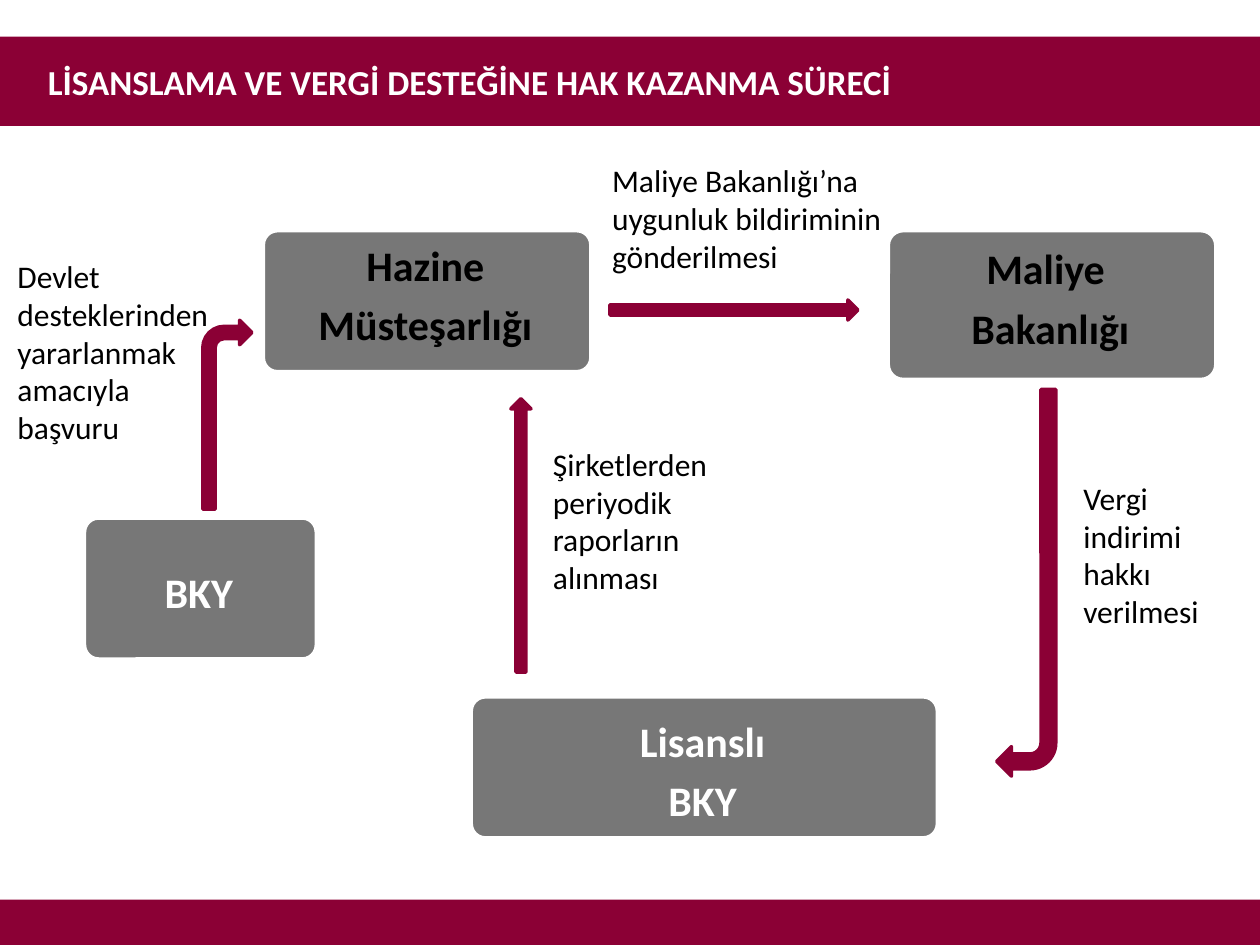
from dataclasses import dataclass

from pptx import Presentation
from pptx.dml.color import RGBColor
from pptx.enum.shapes import MSO_SHAPE
from pptx.enum.text import MSO_ANCHOR, MSO_AUTO_SIZE, PP_ALIGN
from pptx.util import Pt

RECTANGLE = MSO_SHAPE.RECTANGLE
ROUNDED = MSO_SHAPE.ROUNDED_RECTANGLE
BENT_ARROW = MSO_SHAPE.BENT_ARROW
RIGHT_ARROW = MSO_SHAPE.RIGHT_ARROW
MIDDLE = MSO_ANCHOR.MIDDLE
CENTER = PP_ALIGN.CENTER
GROW = MSO_AUTO_SIZE.SHAPE_TO_FIT_TEXT


@dataclass(frozen=True)
class Theme:
    font: str = "Calibri"
    accent: RGBColor = RGBColor(0x8B, 0x00, 0x35)
    gray: RGBColor = RGBColor(0x77, 0x77, 0x77)
    white: RGBColor = RGBColor(0xFF, 0xFF, 0xFF)
    black: RGBColor = RGBColor(0x00, 0x00, 0x00)
    title_size: float = 20
    box_size: float = 24
    note_size: float = 18
    outline: float = 2


THEME = Theme()


@dataclass(frozen=True)
class Frame:
    left: float
    top: float
    width: float
    height: float

    def lengths(self) -> tuple:
        return Pt(self.left), Pt(self.top), Pt(self.width), Pt(self.height)


@dataclass(frozen=True)
class Institution:
    lines: tuple[str, ...]
    frame: Frame
    color: RGBColor
    label_drop: float = 0


@dataclass(frozen=True)
class Arrow:
    preset: MSO_SHAPE
    frame: Frame
    rotation: float = 0


@dataclass(frozen=True)
class Note:
    text: str
    frame: Frame


BARS = (Frame(0, 20.9, 720, 51), Frame(0, 514, 720, 26))
TITLE = Note("LİSANSLAMA VE VERGİ DESTEĞİNE HAK KAZANMA SÜRECİ", Frame(20.2, 31, 578, 31.7))

INSTITUTIONS = (
    Institution(("BKY",), Frame(48.3, 296, 132.5, 80.6), THEME.white, 5.8),
    Institution(("Hazine", "Müsteşarlığı"), Frame(150.5, 131.8, 187.2, 80.6), THEME.black),
    Institution(("Maliye ", "Bakanlığı"), Frame(507.6, 131.8, 187.2, 85), THEME.black),
    Institution(("Lisanslı", "BKY"), Frame(269.3, 398.2, 266.4, 80.6), THEME.white, 5.8),
)

ARROWS = (
    Arrow(BENT_ARROW, Frame(115.9, 183, 28, 108)),
    Arrow(RIGHT_ARROW, Frame(348.5, 171.4, 141.8, 11.5)),
    Arrow(BENT_ARROW, Frame(569.5, 222.5, 33.8, 221), 180),
    Arrow(RIGHT_ARROW, Frame(219.6, 300.2, 156.2, 11.5), 270),
)

NOTES = (
    Note("Devlet desteklerinden yararlanmak amacıyla başvuru", Frame(2.9, 143.3, 136, 116.6)),
    Note("Maliye Bakanlığı’na uygunluk bildiriminin gönderilmesi", Frame(342.7, 88.6, 175.7, 72.7)),
    Note("Şirketlerden periyodik raporların alınması", Frame(308.9, 250.6, 108, 94.3)),
    Note("Vergi indirimi hakkı verilmesi", Frame(612, 270, 108, 94.3)),
)


def add_filled(shapes, preset: MSO_SHAPE, frame: Frame, fill: RGBColor,
               line: RGBColor | None = None):
    shape = shapes.add_shape(preset, *frame.lengths())
    shape.shadow.inherit = False
    shape.fill.solid()
    shape.fill.fore_color.rgb = fill
    if line is None:
        shape.line.fill.background()
    else:
        shape.line.color.rgb = line
        shape.line.width = Pt(THEME.outline)
    return shape


def style_font(para, size: float, color: RGBColor, bold: bool) -> None:
    para.font.name = THEME.font
    para.font.size = Pt(size)
    para.font.color.rgb = color
    para.font.bold = bold


def add_note(shapes, note: Note, size: float, color: RGBColor, bold: bool = False) -> None:
    text_frame = shapes.add_textbox(*note.frame.lengths()).text_frame
    text_frame.word_wrap = True
    text_frame.auto_size = GROW
    text_frame.text = note.text
    style_font(text_frame.paragraphs[0], size, color, bold)


def add_institution(shapes, institution: Institution) -> None:
    """Group a rounded box with its slightly smaller label."""
    group = shapes.add_group_shape()
    frame = institution.frame
    box = add_filled(group.shapes, ROUNDED, frame, THEME.gray, THEME.white)
    box.adjustments[0] = 0.1
    label_frame = Frame(frame.left, frame.top + institution.label_drop,
                        frame.width - 2, frame.height - 4.6)
    text_frame = group.shapes.add_textbox(*label_frame.lengths()).text_frame
    text_frame.word_wrap = True
    text_frame.vertical_anchor = MIDDLE
    text_frame.margin_left = text_frame.margin_right = Pt(5)
    text_frame.margin_top = text_frame.margin_bottom = Pt(5)
    text_frame.text = "\n".join(institution.lines)
    for para in text_frame.paragraphs:
        para.alignment = CENTER
        para.line_spacing = 0.9
        para.space_after = Pt(8)
        style_font(para, THEME.box_size, institution.color, True)


def add_arrow(shapes, arrow: Arrow) -> None:
    shape = add_filled(shapes, arrow.preset, arrow.frame, THEME.accent, THEME.accent)
    shape.rotation = arrow.rotation


def main() -> None:
    deck = Presentation()
    deck.slide_width, deck.slide_height = Pt(720), Pt(540)
    shapes = deck.slides.add_slide(deck.slide_layouts[6]).shapes
    for bar in BARS:
        add_filled(shapes, RECTANGLE, bar, THEME.accent)
    add_note(shapes, TITLE, THEME.title_size, THEME.white, bold=True)
    for institution in INSTITUTIONS:
        add_institution(shapes, institution)
    for arrow in ARROWS:
        add_arrow(shapes, arrow)
    for note in NOTES:
        add_note(shapes, note, THEME.note_size, THEME.black)
    deck.save("out.pptx")


if __name__ == "__main__":
    main()
